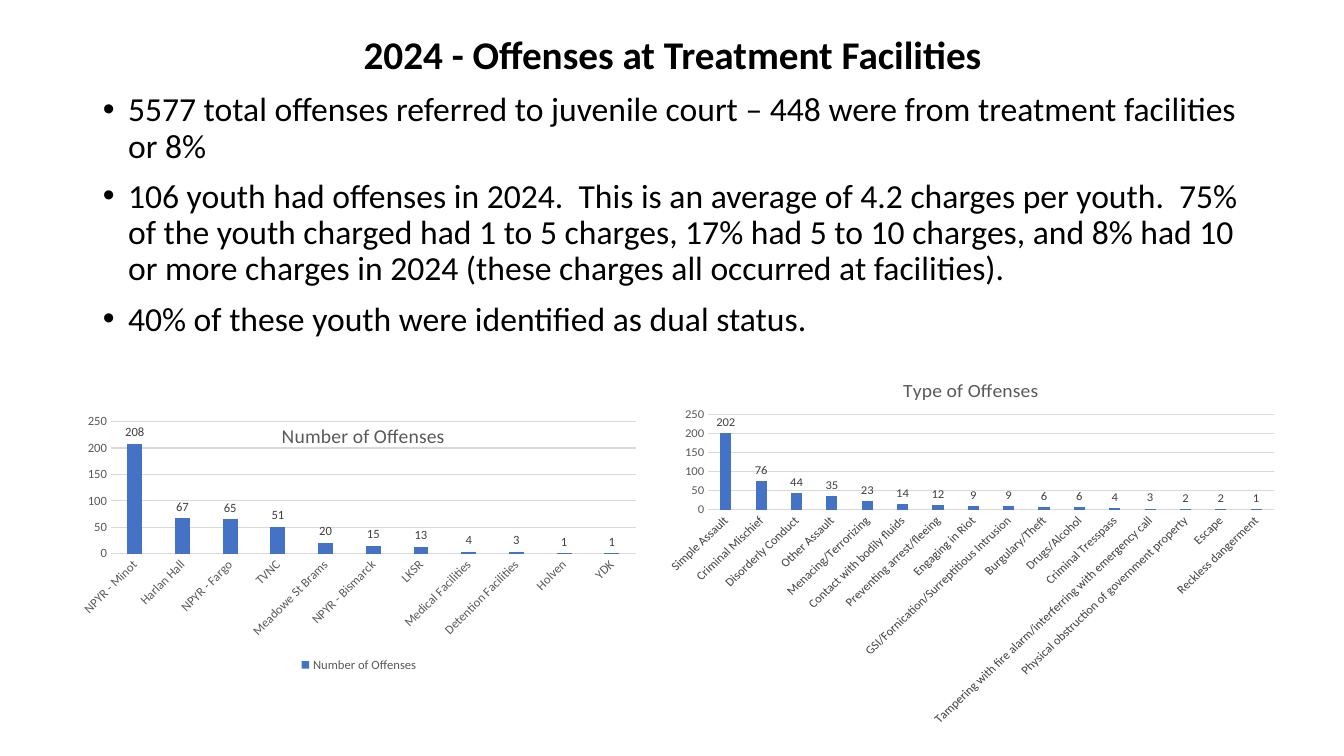
from dataclasses import dataclass
from pptx import Presentation
from pptx.chart.data import CategoryChartData
from pptx.dml.color import RGBColor
from pptx.enum.chart import (XL_CHART_TYPE, XL_LABEL_POSITION,
                             XL_LEGEND_POSITION, XL_TICK_MARK)
from pptx.enum.text import MSO_ANCHOR, MSO_AUTO_SIZE, PP_ALIGN
from pptx.oxml import parse_xml
from pptx.oxml.ns import nsdecls, qn
from pptx.util import Inches, Pt

TITLE = "2024 - Offenses at Treatment Facilities"
POINTS = [
    "5577 total offenses referred to juvenile court – 448 were from treatment facilities or 8%",
    "106 youth had offenses in 2024.  This is an average of 4.2 charges per youth.  75% of the youth "
    "charged had 1 to 5 charges, 17% had 5 to 10 charges, and 8% had 10 or more charges in 2024 "
    "(these charges all occurred at facilities).",
    "40% of these youth were identified as dual status.",
]
CHARTS = [
    {
        "name": "Number of Offenses",
        "box": (0.7, 3.59, 5.72, 3.12),
        "plot": {"x": 0.07, "y": 0.19, "w": 0.91, "h": 0.42},
        "head": {"x": 0.36, "y": 0.18},
        "turn": -2700000,
        "legend": True,
        "rows": [
            ("NPYR - Minot", 208), ("Harlan Hall", 67), ("NPYR - Fargo", 65),
            ("TVNC", 51), ("Meadowe St Brams", 20), ("NPYR - Bismarck", 15),
            ("LKSR", 13), ("Medical Facilities", 4), ("Detention Facilities", 3),
            ("Holven", 1), ("YDK", 1),
        ],
    },
    {
        "name": "Type of Offenses",
        "box": (6.5, 3.59, 6.26, 3.61),
        "plot": None,
        "head": None,
        "turn": -60000000,
        "legend": False,
        "rows": [
            ("Simple Assault", 202), ("Criminal Mischief", 76),
            ("Disorderly Conduct", 44), ("Other Assault", 35),
            ("Menacing/Terrorizing", 23), ("Contact with bodily fluids", 14),
            ("Preventing arrest/fleeing", 12), ("Engaging in Riot", 9),
            ("GSI/Fornication/Surreptitious Intrusion", 9),
            ("Burgulary/Theft", 6), ("Drugs/Alcohol", 6),
            ("Criminal Tresspass", 4),
            ("Tampering with fire alarm/interferring with emergency call", 3),
            ("Physical obstruction of government property", 2),
            ("Escape", 2), ("Reckless dangerment", 1),
        ],
    },
]


@dataclass(frozen=True)
class Theme:
    font: str = "Calibri"
    ink: str = "000000"
    soft: str = "595959"
    label: str = "404040"
    grid: str = "D9D9D9"
    bar: str = "4472C4"
    title: int = 28
    body: int = 24
    head: int = 14
    base: int = 10
    small: int = 9


LOOK = Theme()


def style(font, size, color, bold=False):
    font.name, font.size, font.bold = LOOK.font, Pt(size), bold
    font.color.rgb = RGBColor.from_string(color)


def write(para, text, size, color=LOOK.ink, bold=False, align=None,
          space=None, lead=None, indent=None):
    run = para.add_run()
    run.text = text
    style(run.font, size, color, bold)
    para.alignment, para.space_before, para.line_spacing = align, space, lead
    if indent:
        props = para._p.get_or_add_pPr()
        props.set("marL", str(Inches(indent)))
        props.set("indent", str(-Inches(indent)))


def place(holder, *box):
    holder.left, holder.top, holder.width, holder.height = map(Inches, box)
    frame = holder.text_frame
    frame.word_wrap = True
    frame.auto_size = MSO_AUTO_SIZE.NONE
    frame.vertical_anchor = MSO_ANCHOR.TOP
    return frame


def settle(parent, index, spots, inner=False):
    for old in parent.findall(qn("c:layout")):
        parent.remove(old)
    items = [("layoutTarget", "inner")] if inner else []
    items += [(f"{key}Mode", "edge") for key in "xy"]
    items += spots.items()
    body = "".join(f'<c:{tag} val="{val}"/>' for tag, val in items)
    parent.insert(index, parse_xml(
        f'<c:layout {nsdecls("c")}><c:manualLayout>{body}</c:manualLayout></c:layout>'))


def rule(line):
    line.width = Pt(0.75)
    line.color.rgb = RGBColor.from_string(LOOK.grid)


def draw(slide, item):
    data = CategoryChartData()
    names, values = zip(*item["rows"])
    data.categories = names
    data.add_series(item["name"], values)
    chart = slide.shapes.add_chart(
        XL_CHART_TYPE.COLUMN_CLUSTERED, *map(Inches, item["box"]), data).chart
    style(chart.font, LOOK.base, LOOK.ink)

    chart.has_title = True
    head = chart.chart_title
    write(head.text_frame.paragraphs[0], item["name"], size=LOOK.head, color=LOOK.soft)
    head.include_in_layout = False
    if item["head"]:
        settle(head._element, 1, item["head"])
    if item["plot"]:
        settle(chart._chartSpace.chart.plotArea, 0, item["plot"], inner=True)

    chart.has_legend = item["legend"]
    if chart.has_legend:
        chart.legend.position = XL_LEGEND_POSITION.BOTTOM
        chart.legend.include_in_layout = False
        style(chart.legend.font, LOOK.small, LOOK.soft)

    for axis in (chart.category_axis, chart.value_axis):
        axis.major_tick_mark = axis.minor_tick_mark = XL_TICK_MARK.NONE
        style(axis.tick_labels.font, LOOK.small, LOOK.soft)
    cats, vals = chart.category_axis, chart.value_axis
    rule(cats.format.line)
    turn = cats._element.find(qn("c:txPr")).find(qn("a:bodyPr"))
    turn.set("rot", str(item["turn"]))
    turn.set("vert", "horz")
    vals.format.line.fill.background()
    vals.minimum_scale, vals.maximum_scale, vals.major_unit = 0, 250, 50
    rule(vals.major_gridlines.format.line)

    plot = chart.plots[0]
    plot.gap_width, plot.overlap, plot.vary_by_categories = 219, -27, False
    fill = plot.series[0].format.fill
    fill.solid()
    fill.fore_color.rgb = RGBColor.from_string(LOOK.bar)
    plot.has_data_labels = True
    labels = plot.data_labels
    labels.show_value = True
    labels.position = XL_LABEL_POSITION.OUTSIDE_END
    style(labels.font, LOOK.small, LOOK.label)


def main():
    deck = Presentation()
    deck.slide_width, deck.slide_height = Inches(13.33), Inches(7.5)
    slide = deck.slides.add_slide(deck.slide_layouts[1])
    title = place(slide.shapes.title, 0.92, 0.3, 11.5, 0.55)
    write(title.paragraphs[0], TITLE, size=LOOK.title, bold=True,
          align=PP_ALIGN.CENTER, lead=0.9)
    body = place(slide.placeholders[1], 0.92, 0.87, 11.5, 2.65)
    for i, point in enumerate(POINTS):
        para = body.add_paragraph() if i else body.paragraphs[0]
        write(para, point, size=LOOK.body, space=Pt(10 if i else 0),
              lead=0.9, indent=0.25)
    for item in CHARTS:
        draw(slide, item)
    deck.save("out.pptx")


if __name__ == "__main__":
    main()
